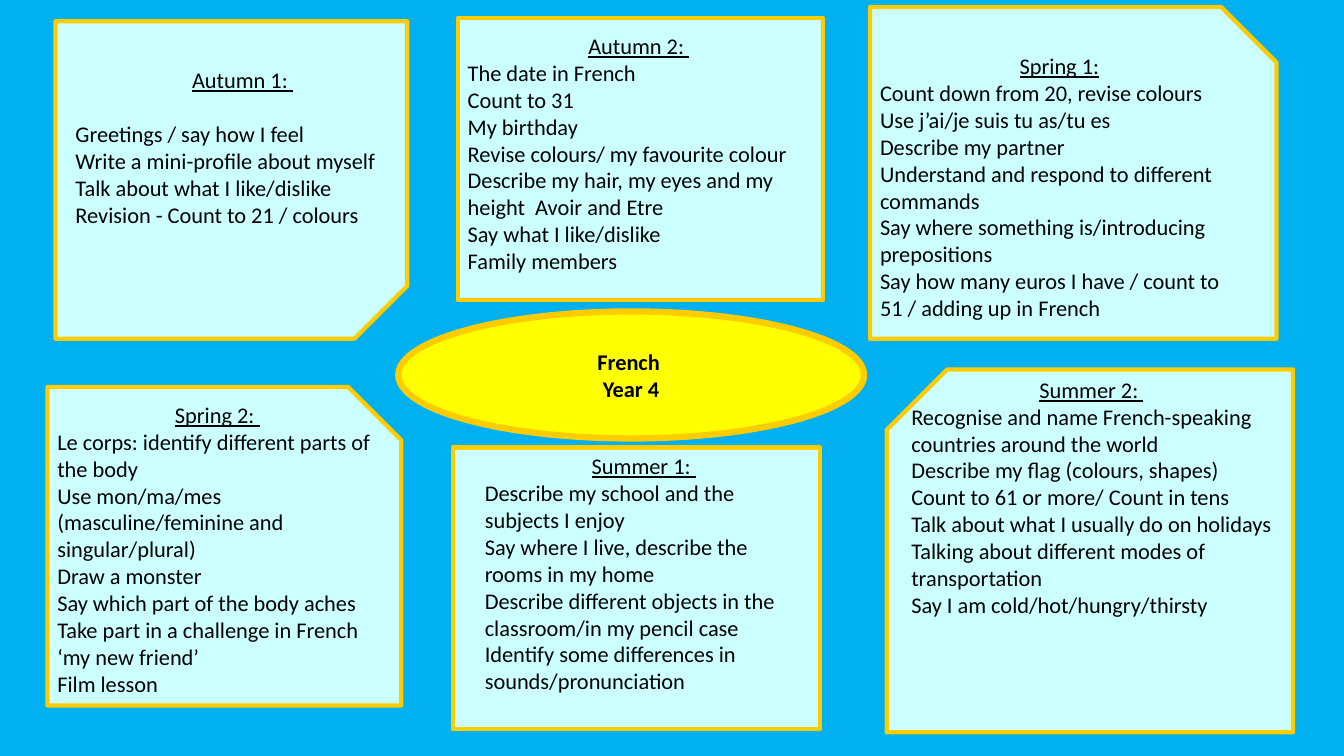
from pptx import Presentation
from pptx.dml.color import RGBColor
from pptx.enum.shapes import MSO_SHAPE as Kind
from pptx.enum.text import MSO_ANCHOR as Anchor, MSO_AUTO_SIZE as Fit, PP_ALIGN as Align
from pptx.util import Inches, Pt

SKY = RGBColor(0x00, 0xB0, 0xF0)
PALE = RGBColor(0xCC, 0xFF, 0xFF)
GOLD = RGBColor(0xFF, 0xCC, 0x00)
YELLOW = RGBColor(0xFF, 0xFF, 0x00)
BLACK = RGBColor(0x00, 0x00, 0x00)


class Board:
    font = "Calibri"
    size = Pt(16)

    def __init__(self, slide):
        self.slide = slide
        back = slide.background.fill
        back.solid()
        back.fore_color.rgb = SKY

    def card(self, kind, place, turn=0, fill=PALE, width=3):
        shape = self.slide.shapes.add_shape(kind, *map(Inches, place))
        shape.rotation = turn
        shape.shadow.inherit = False
        shape.fill.solid()
        shape.fill.fore_color.rgb = fill
        shape.line.color.rgb = GOLD
        shape.line.width = Pt(width)
        return shape

    def label(self, frame, lines, align=Align.LEFT, bold=False):
        frame.word_wrap = True
        for i, line in enumerate(lines):
            para = frame.paragraphs[0] if i == 0 else frame.add_paragraph()
            para.text = line
            para.alignment = align
            font = para.font
            font.name, font.size, font.bold = self.font, self.size, bold
            font.color.rgb = BLACK

    def topics(self, frame, title, lines, gap=0):
        self.label(frame, [title, *lines])
        head = frame.paragraphs[0]
        head.alignment = Align.CENTER
        head.font.underline = True
        if gap:
            head.space_after = Pt(gap)

    def note(self, place, title, lines, gap=0):
        frame = self.slide.shapes.add_textbox(*map(Inches, place)).text_frame
        frame.auto_size = Fit.SHAPE_TO_FIT_TEXT
        self.topics(frame, title, lines, gap)


deck = Presentation()
deck.slide_width, deck.slide_height = Inches(13.33), Inches(7.5)
board = Board(deck.slides.add_slide(deck.slide_layouts[6]))

# Centre title
hub = board.card(Kind.OVAL, (3.95, 3.09, 4.62, 1.26), fill=YELLOW, width=4.5)
hub.text_frame.vertical_anchor = Anchor.MIDDLE
board.label(hub.text_frame, ["French ", "Year 4"], Align.CENTER, bold=True)

# Cards
SNIP = Kind.SNIP_1_RECTANGLE
board.card(SNIP, (0.47, 3.84, 3.51, 3.16))
board.card(SNIP, (0.72, 0.04, 3.15, 3.49), turn=90)
spring = board.card(SNIP, (8.63, 0.07, 4.03, 3.29))
board.card(SNIP, (9.01, 3.45, 3.6, 4.03), turn=270)
board.card(Kind.RECTANGLE, (4.49, 4.44, 3.64, 2.79))
board.card(Kind.RECTANGLE, (4.54, 0.18, 3.62, 2.8))

# Spring 1 sits inside its card
spring.text_frame.vertical_anchor = Anchor.MIDDLE
board.topics(spring.text_frame, "Spring 1:", [
    "Count down from 20, revise colours",
    "Use j’ai/je suis tu as/tu es",
    "Describe my partner",
    "Understand and respond to different commands",
    "Say where something is/introducing prepositions",
    "Say how many euros I have / count to 51 / adding up in French",
])

# Topics of the other half terms
board.note((0.65, 0.61, 3.51, 2.02), "Autumn 1: ", [
    "Greetings / say how I feel",
    "Write a mini-profile about myself",
    "Talk about what I like/dislike",
    "Revision - Count to 21 / colours",
], gap=19.5)
board.note((4.54, 0.27, 3.59, 2.79), "Autumn 2: ", [
    "The date in French",
    "Count to 31",
    "My birthday",
    "Revise colours/ my favourite colour",
    "Describe my hair, my eyes and my height  Avoir and Etre",
    "Say what I like/dislike",
    "Family members",
])
board.note((0.47, 3.93, 3.37, 3.06), "Spring 2: ", [
    "Le corps: identify different parts of the body",
    "Use mon/ma/mes (masculine/feminine and singular/plural)",
    "Draw a monster",
    "Say which part of the body aches",
    "Take part in a challenge in French ‘my new friend’",
    "Film lesson",
])
board.note((4.71, 4.44, 3.35, 2.83), "Summer 1: ", [
    "Describe my school and the subjects I enjoy",
    "Say where I live, describe the rooms in my home",
    "Describe different objects in the classroom/in my pencil case",
    "Identify some differences in sounds/pronunciation",
])
board.note((8.94, 3.68, 3.77, 2.79), "Summer 2: ", [
    "Recognise and name French-speaking countries around the world",
    "Describe my flag (colours, shapes)",
    "Count to 61 or more/ Count in tens",
    "Talk about what I usually do on holidays",
    "Talking about different modes of transportation",
    "Say I am cold/hot/hungry/thirsty",
])

deck.save("out.pptx")
